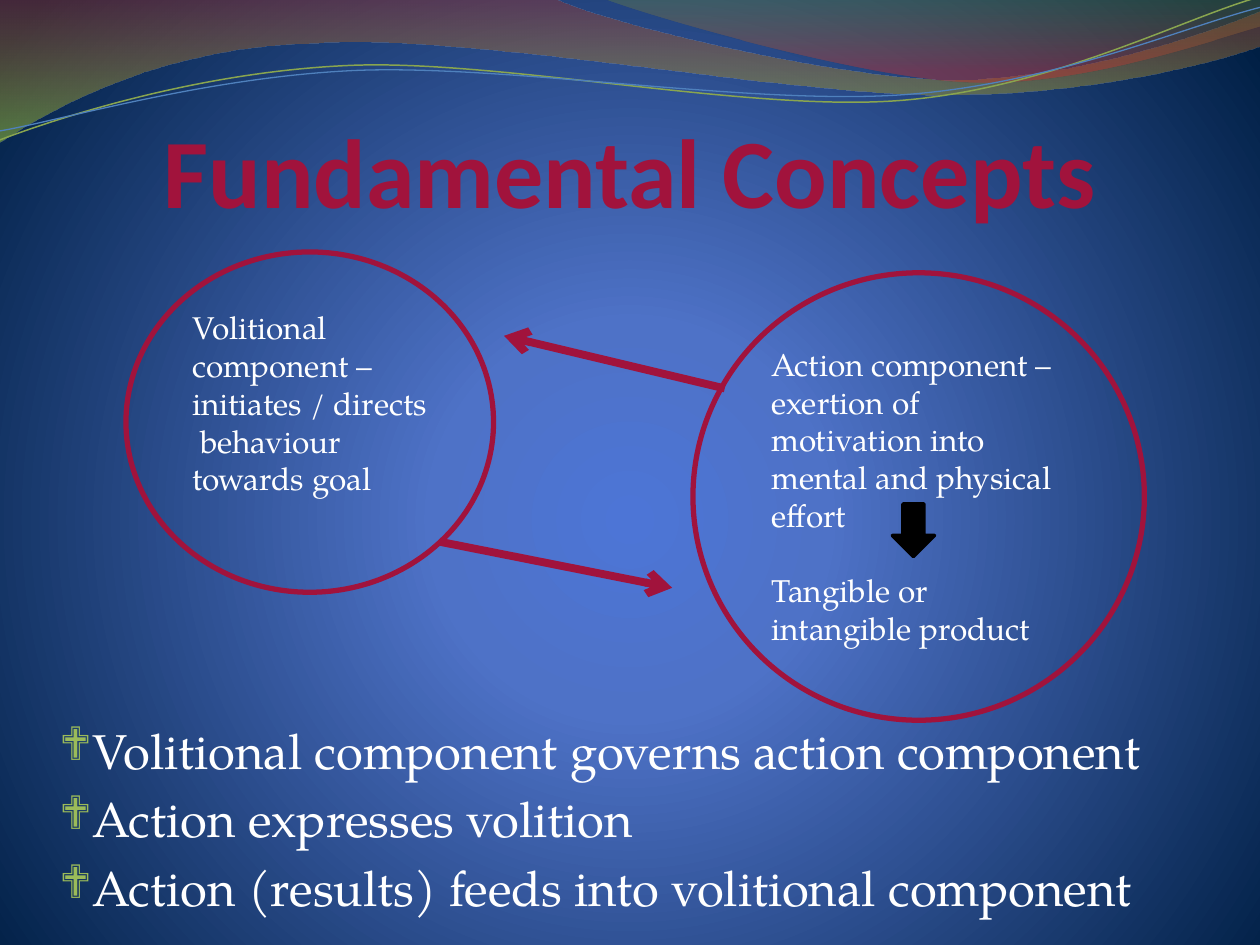
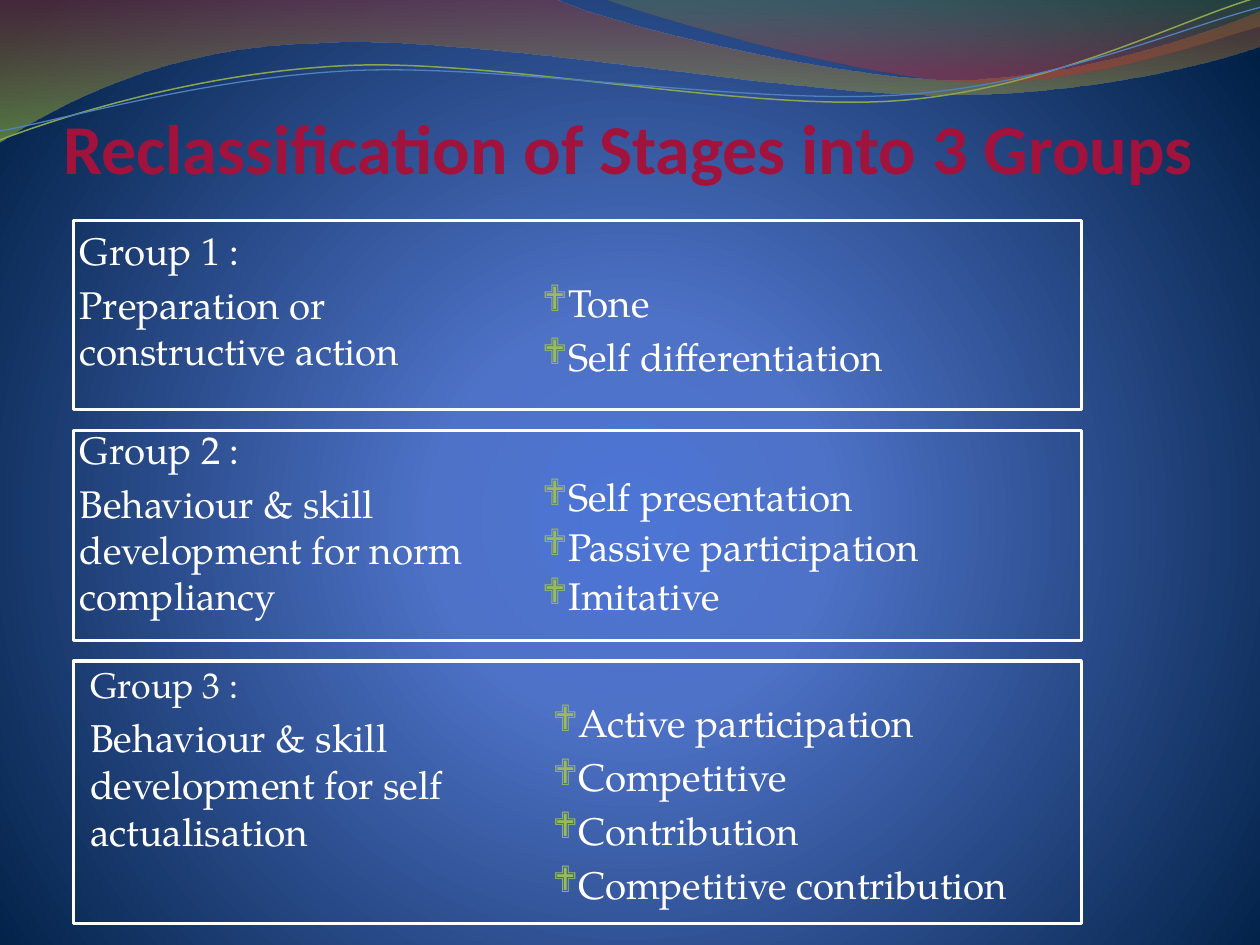
from lxml import etree
from pptx import Presentation
from pptx.dml.color import RGBColor
from pptx.enum.shapes import MSO_CONNECTOR as Link, MSO_SHAPE as Shape
from pptx.enum.text import MSO_ANCHOR as Anchor, MSO_AUTO_SIZE as Fit, PP_ALIGN as Align
from pptx.oxml.ns import qn
from pptx.util import Cm, Pt

CRIMSON, WHITE, BLACK, LEAF = "A1133C", "FFFFFF", "000000", "9BBB59"
TITLE_FONT, BODY_FONT, BULLET_FONT = "Calibri", "TeX Gyre Pagella", "Wingdings"

# Waves: a start point, then straight steps (1 point) or cubic curves (3 points), in cm
BAND = [[(0, 0)], [(11.18, -0.03)],
        [(12.09, 0.43), (16.87, 1.6), (19.25, 1.6)],
        [(21.67, 1.6), (24.33, 0.66), (25.4, 0.23)], [(25.43, 0.91)],
        [(24.97, 1.12), (22.1, 1.93), (18.95, 1.91)],
        [(15.8, 1.91), (9.7, 0.71), (6.53, 0.86)],
        [(3.28, 0.91), (1.17, 2.11), (-0.03, 2.87)], [(0, 0)]]
CORNER = [[(12.17, -0.03)], [(12.93, 0.28), (17.32, 1.57), (19.53, 1.65)],
          [(21.74, 1.75), (24.41, 0.81), (25.4, 0.53)], [(25.4, 0)], [(12.17, -0.03)]]
GREEN_LINE = [[(0, 2.82)], [(1.22, 2.36), (4.01, 1.45), (7.04, 1.32)],
              [(10.03, 1.19), (15.06, 2.26), (18.11, 2.03)],
              [(21.16, 1.8), (23.83, 0.38), (25.35, -0.05)]]
BLUE_LINE = [[(0, 2.64)], [(1.19, 2.44), (4.17, 1.55), (7.19, 1.42)],
             [(10.24, 1.3), (15.16, 2.13), (18.21, 1.91)],
             [(21.23, 1.7), (23.9, 0.53), (25.4, 0.15)]]


def rgb(code):
    return RGBColor.from_string(code)


def add_child(parent, tag, **attributes):
    child = etree.SubElement(parent, qn(tag))
    for name, value in attributes.items():
        child.set(name, str(value))
    return child


def set_gradient(fill, owner, stops, circle=None):
    """Stops are (position %, colour, opacity %); linear downwards unless circle is given."""
    fill.gradient()
    gradient = owner.xpath(".//a:gradFill")[0]
    gradient.clear()
    stop_list = add_child(gradient, "a:gsLst")
    for position, code, opacity in stops:
        stop = add_child(stop_list, "a:gs", pos=position * 1000)
        colour = add_child(stop, "a:srgbClr", val=code)
        if opacity < 100:
            add_child(colour, "a:alpha", val=opacity * 1000)
    if circle:
        centre = add_child(gradient, "a:path", path="circle")
        add_child(centre, "a:fillToRect", **{side: part * 1000 for side, part in circle.items()})
    else:
        add_child(gradient, "a:lin", ang=90 * 60000, scaled=1)


def bend(wave, outline):
    """Join each three straight steps of a curve into one cubic curve."""
    straight = iter(wave.element.xpath(".//a:lnTo"))
    for step in outline[1:]:
        parts = [next(straight) for _ in step]
        if len(step) == 3:
            curve = etree.Element(qn("a:cubicBezTo"))
            parts[0].addprevious(curve)
            for part in parts:
                curve.append(part[0])
                part.getparent().remove(part)


def write(para, text, size=22, font=BODY_FONT, colour=WHITE, bold=False, bullet=False,
          before=None, spacing=None, align=Align.LEFT):
    para.text = text
    para.alignment = align
    if spacing:
        para.line_spacing = spacing
    if before is not None:
        para.space_before = Pt(before)
    for span in para.runs:
        span.font.size, span.font.name, span.font.bold = Pt(size), font, bold
        span.font.color.rgb = rgb(colour)
    if bullet:
        properties = para._p.get_or_add_pPr()
        add_child(add_child(properties, "a:buClr"), "a:srgbClr", val=LEAF)
        add_child(properties, "a:buSzPct", val=95000)
        add_child(properties, "a:buFont", typeface=BULLET_FONT)
        add_child(properties, "a:buChar", char="❖")


class Painter:
    def __init__(self, deck):
        self.deck = deck
        self.page = None

    def new_page(self, title, place, size, align=Align.LEFT):
        self.page = self.deck.slides.add_slide(self.deck.slide_layouts[5])
        box = self.page.shapes.title
        box.left, box.top, box.width, box.height = map(Cm, place)
        frame = self.set_frame(box, 0)
        frame.vertical_anchor = Anchor.BOTTOM
        write(frame.paragraphs[0], title, size, TITLE_FONT, CRIMSON, bold=True, align=align)

    def set_frame(self, box, side, edge=None):
        frame = box.text_frame
        frame.word_wrap, frame.auto_size = True, Fit.NONE
        frame.margin_left = frame.margin_right = Cm(side)
        frame.margin_top = frame.margin_bottom = Cm(side if edge is None else edge)
        frame.vertical_anchor = Anchor.TOP
        return frame

    def fill_frame(self, frame, lines):
        """Each line is a text with its format."""
        for index, (text, style) in enumerate(lines):
            para = frame.add_paragraph() if index else frame.paragraphs[0]
            write(para, text, **style)

    def text(self, place, lines, **style):
        """Lines are plain texts, or (text, format) pairs; space before is 20% of the size."""
        box = self.page.shapes.add_textbox(*map(Cm, place))
        styled = []
        for line in lines:
            words, extra = (line, {}) if isinstance(line, str) else line
            look = {"size": 22, **style, **extra}
            styled.append((words, {**look, "before": round(look["size"] * 0.2, 1)}))
        self.fill_frame(self.set_frame(box, 0.13), styled)

    def shape(self, kind, place, line, width, fill=None, lines=()):
        box = self.page.shapes.add_shape(kind, *map(Cm, place))
        self.finish(box, line, width, fill)
        self.fill_frame(self.set_frame(box, 0.25, 0.13), lines)

    def finish(self, box, line=None, width=1, fill=None):
        box.shadow.inherit = False
        if fill:
            box.fill.solid()
            box.fill.fore_color.rgb = rgb(fill)
        else:
            box.fill.background()
        if line:
            box.line.color.rgb, box.line.width = rgb(line), Pt(width)
        else:
            box.line.fill.background()

    def arrow(self, start, end):
        line = self.page.shapes.add_connector(Link.STRAIGHT, *map(Cm, (*start, *end)))
        line.line.color.rgb, line.line.width = rgb(CRIMSON), Pt(4.5)
        add_child(line.line._get_or_add_ln(), "a:tailEnd", type="arrow")
        add_child(line.element.spPr, "a:effectLst")

    def master_wave(self, outline, line=None, width=1, stops=None):
        """Draw a wave on the page and hand it over to the master."""
        points = [(Cm(x), Cm(y)) for step in outline for x, y in step]
        builder = self.page.shapes.build_freeform(*points[0])
        builder.add_line_segments(points[1:], close=stops is not None)
        wave = builder.convert_to_shape()
        bend(wave, outline)
        self.finish(wave, line, width)
        if stops:
            set_gradient(wave.fill, wave.element, stops)
        self.deck.slide_master.shapes.element.append(wave.element)

    def master_look(self):
        master = self.deck.slide_master
        set_gradient(master.background.fill, master.element,
                     [(0, "4D75D6", 100), (25, "4E72C7", 100), (100, "001F44", 100)],
                     circle={"l": 10, "t": 110, "r": 10, "b": 100})
        self.master_wave(BAND, stops=[(0, "973330", 45), (100, "95C238", 55)])
        self.master_wave(CORNER, stops=[(0, "769537", 30), (80, "BE3330", 45)])
        self.master_wave(GREEN_LINE, "89A54F", 0.85)
        self.master_wave(BLUE_LINE, "4F81BD", 0.75)


def concepts_page(painter):
    painter.new_page("Fundamental Concepts", (1.91, 2.54, 21.59, 2.06), 56, Align.CENTER)
    painter.master_look()

    # Statements
    painter.text((1.07, 14.39, 22.23, 4.24),
                 ["Volitional component governs action component",
                  "Action expresses volition",
                  "Action (results) feeds into volitional component"], size=28, bullet=True)

    # The two components
    painter.shape(Shape.OVAL, (2.54, 5.08, 7.41, 6.86), CRIMSON, 3, lines=[
        ("Volitional component – initiates / directs\v behaviour towards goal", {"size": 18})])
    painter.shape(Shape.OVAL, (13.97, 5.5, 9.1, 9.02), CRIMSON, 3, lines=[
        ("Action component – exertion of motivation into mental and physical effort",
         {"size": 18}),
        ("Tangible or intangible product", {"size": 18, "before": 21.5})])

    # Arrows
    painter.arrow((8.86, 10.92), (13.55, 11.85))
    painter.arrow((14.61, 7.83), (10.16, 6.77))
    painter.shape(Shape.DOWN_ARROW, (17.99, 10.16, 0.85, 1.06), BLACK, 2, fill=BLACK)


def groups_page(painter):
    painter.new_page("Reclassification of Stages into 3 Groups", (1.27, 1.69, 23.5, 2.12), 40)
    tight = {"spacing": 0.9}

    # Group names
    for place, lines in [
        ((1.48, 8.46, 8.26, 4.45),
         ["Group 2 :", "Behaviour & skill development for norm compliancy"]),
        ((1.48, 4.45, 8.26, 3.39), ["Group 1 :", "Preparation or constructive action"]),
        ((1.69, 13.33, 8.26, 3.76),
         [("Group 3 :", {"size": 20.4, **tight}),
          ("Behaviour & skill development for self actualisation", {"size": 22.2})]),
    ]:
        painter.text(place, lines)

    # Stages in each group
    for place, stages, style in [
        ((10.8, 5.5, 8.26, 2.54), ["Tone", "Self differentiation"], {}),
        ((10.8, 9.52, 8.26, 3.39),
         ["Self presentation", "Passive participation", "Imitative"], tight),
        ((11.01, 13.97, 9.74, 4.66),
         ["Active participation", "Competitive", "Contribution", "Competitive contribution"], {}),
    ]:
        painter.text(place, stages, bullet=True, **style)

    # Frames, one below the other with equal gaps
    top, gap = 4.45, 0.42
    for height in (3.81, 4.23, 5.29):
        painter.shape(Shape.RECTANGLE, (1.48, top, 20.32, height), WHITE, 2)
        top += height + gap


def main():
    deck = Presentation()
    deck.slide_width, deck.slide_height = Cm(25.4), Cm(19.05)
    painter = Painter(deck)
    concepts_page(painter)
    groups_page(painter)
    deck.save("out.pptx")


if __name__ == "__main__":
    main()
